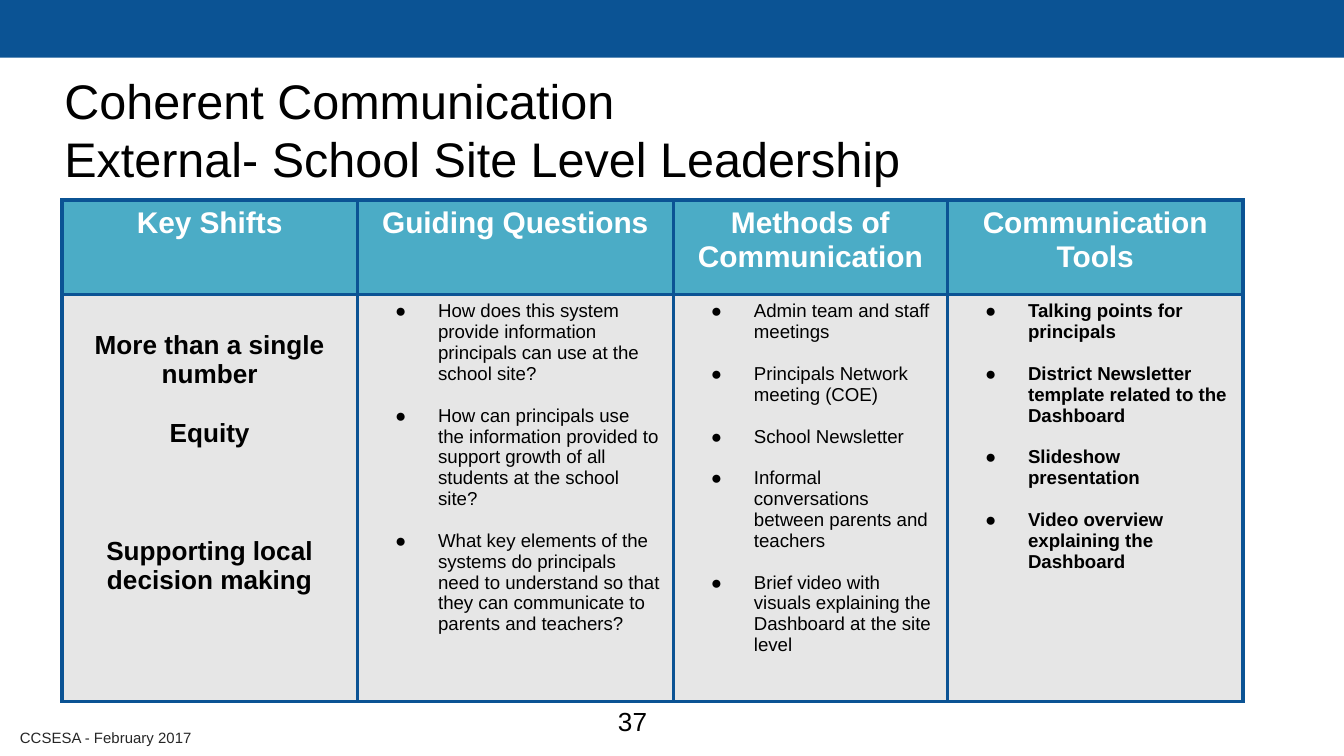
import pptx
import pptx.dml.color
import pptx.enum.shapes
import pptx.enum.text
import pptx.oxml
import pptx.oxml.ns
import pptx.util
from pptx.util import Inches

COLORS = {"blue": "0B5394", "teal": "4BACC6", "gray": "E6E6E6",
          "black": "000000", "white": "FFFFFF", "dark": "262626"}
FONT = "Arial"
ALIGN = pptx.enum.text.PP_ALIGN
ANCHOR = pptx.enum.text.MSO_ANCHOR
NS = pptx.oxml.ns.nsdecls("a")

HEADS = ["Key Shifts", "Guiding Questions", "Methods of Communication",
         "Communication Tools"]
# Each shift with the space before it in points
SHIFTS = [("More than a single number", 0), ("Equity", 16),
          ("Supporting local decision making", 47)]
LISTS = [
    ["How does this system provide information principals can use at the school site?",
     "How can principals use the information provided to support growth of all "
     "students at the school site?",
     "What key elements of the systems do principals need to understand so that "
     "they can communicate to parents and teachers?"],
    ["Admin team and staff meetings",
     "Principals Network meeting (COE)",
     "School Newsletter",
     "Informal conversations between parents and teachers",
     "Brief video with visuals explaining the Dashboard at the site level"],
    ["Talking points for principals",
     "District Newsletter template related to the Dashboard",
     "Slideshow presentation",
     "Video overview explaining the Dashboard"],
]


class Deck:
    def __init__(self, slide):
        self.slide = slide

    def color(self, name):
        return pptx.dml.color.RGBColor.from_string(COLORS[name])

    def style(self, para, size, color="black", bold=False):
        font = para.font
        font.name, font.size, font.bold = FONT, pptx.util.Pt(size), bold
        font.color.rgb = self.color(color)

    def bar(self, left, top, width, height, fill):
        shape = self.slide.shapes.add_shape(
            pptx.enum.shapes.MSO_SHAPE.RECTANGLE,
            Inches(left), Inches(top), Inches(width), Inches(height))
        shape.shadow.inherit = False
        shape.fill.solid()
        shape.fill.fore_color.rgb = self.color(fill)
        shape.line.fill.background()

    def text(self, text, left, top, width, height, size, color="black",
             anchor=ANCHOR.MIDDLE):
        box = self.slide.shapes.add_textbox(
            Inches(left), Inches(top), Inches(width), Inches(height))
        frame = box.text_frame
        frame.word_wrap = True
        frame.vertical_anchor = anchor
        frame.margin_left = frame.margin_right = Inches(0.1)
        frame.margin_top = frame.margin_bottom = Inches(0.1)
        para = frame.paragraphs[0]
        para.text = text
        self.style(para, size, color)

    def table(self, left, top, cols, rows):
        frame = self.slide.shapes.add_table(
            len(rows), len(cols), Inches(left), Inches(top),
            Inches(sum(cols)), Inches(sum(rows)))
        table = frame.table
        for col, width in zip(table.columns, cols):
            col.width = Inches(width)
        for row, height in zip(table.rows, rows):
            row.height = Inches(height)
        return table

    def cell(self, cell, items, fill, size, color="black", bold=False,
             bullet=False, top=0.05):
        """Fill a cell with (text, space before) items."""
        cell.fill.solid()
        cell.fill.fore_color.rgb = self.color(fill)
        cell.margin_left = cell.margin_right = Inches(0.1)
        cell.margin_top, cell.margin_bottom = Inches(top), Inches(0.05)
        self.border(cell)
        frame = cell.text_frame
        for i, (text, space) in enumerate(items):
            para = frame.add_paragraph() if i else frame.paragraphs[0]
            para.text = text
            para.alignment = ALIGN.LEFT if bullet else ALIGN.CENTER
            if space:
                para.space_before = pptx.util.Pt(space)
            if bullet:
                self.bullet(para)
            self.style(para, size, color, bold)

    def border(self, cell):
        props = cell._tc.get_or_add_tcPr()
        for i, side in enumerate("LRTB"):
            props.insert(i, pptx.oxml.parse_xml(
                f'<a:ln{side} {NS} w="{pptx.util.Pt(2.25)}"><a:solidFill>'
                f'<a:srgbClr val="{COLORS["blue"]}"/></a:solidFill></a:ln{side}>'))

    def bullet(self, para):
        props = para._p.get_or_add_pPr()
        props.set("marL", str(Inches(0.5)))
        props.set("indent", str(Inches(-0.32)))
        props.append(pptx.oxml.parse_xml(f'<a:buFont {NS} typeface="{FONT}"/>'))
        props.append(pptx.oxml.parse_xml(f'<a:buChar {NS} char="●"/>'))


def main():
    show = pptx.Presentation()
    # Widescreen, 16 to 9
    show.slide_width, show.slide_height = Inches(10), Inches(10 * 9 / 16)
    deck = Deck(show.slides.add_slide(show.slide_layouts[6]))

    # Footer, top band, title and page number
    deck.text("CCSESA - February 2017", 0.05, 5.4, 1.59, 0.17, 8, "dark")
    deck.bar(0, 0, 10, 0.43, "blue")
    deck.text("Coherent Communication\vExternal- School Site Level Leadership",
              0.38, 0.43, 9.32, 1.14, 26, anchor=ANCHOR.TOP)
    deck.text("37", 4.5, 5.15, 0.6, 0.43, 14)

    # Table: header row, then key shifts and bullet lists
    table = deck.table(0.46, 1.49, [2.2, 2.35, 2.04, 2.2], [0.7, 3.03])
    for col, head in enumerate(HEADS):
        deck.cell(table.cell(0, col), [(head, 0)], "teal", 16, "white", True)
    deck.cell(table.cell(1, 0), SHIFTS, "gray", 14, bold=True, top=0.27)
    for col, points in enumerate(LISTS, 1):
        items = [(point, 11.2 if i else 0) for i, point in enumerate(points)]
        deck.cell(table.cell(1, col), items, "gray", 10,
                  bold=col == len(LISTS), bullet=True)

    show.save("out.pptx")


if __name__ == "__main__":
    main()
